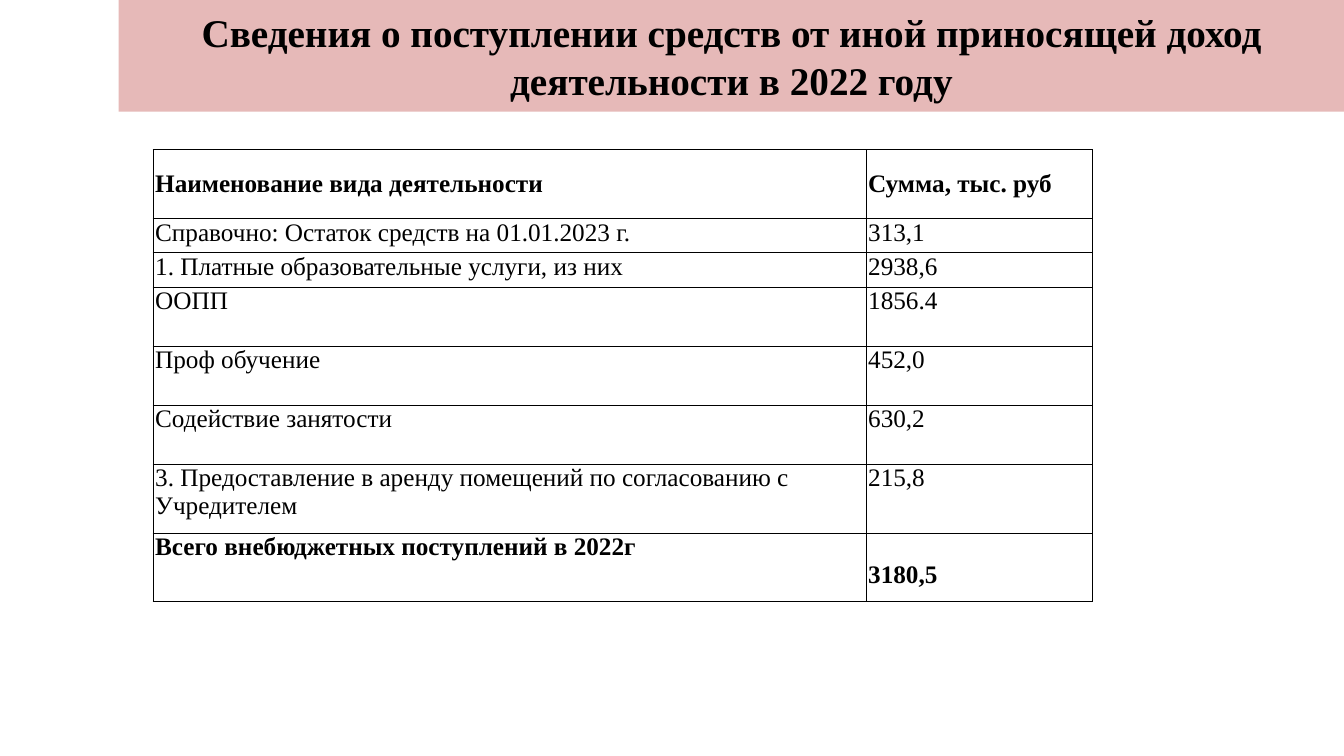
from dataclasses import dataclass

from lxml import etree
from pptx import Presentation
from pptx import util as u
from pptx.dml.color import RGBColor
from pptx.enum import shapes, text
from pptx.oxml.ns import qn


@dataclass(frozen=True)
class Theme:
    font: str = "Times New Roman"
    ink: str = "000000"
    band: str = "E6B9B8"
    title_size: int = 28
    body_size: int = 18
    border: int = 1


class Deck:
    """Style and current slide; the grid is 100 columns by 22 rows."""

    def __init__(self, theme):
        self.theme = theme
        self.prs = Presentation()
        self.prs.slide_width, self.prs.slide_height = u.Inches(13.33), u.Inches(7.5)
        self.s = self.prs.slides.add_slide(self.prs.slide_layouts[6])

    def x(self, cols):
        return int(self.prs.slide_width * cols / 100)

    def y(self, rows):
        return int(self.prs.slide_height * rows / 22)

    def set_text(self, tf, words, size, bold):
        p = tf.paragraphs[0]
        p.text = words
        p.font.name, p.font.size, p.font.bold = self.theme.font, u.Pt(size), bold
        p.font.color.rgb = RGBColor.from_string(self.theme.ink)
        return p

    def banner(self, words, left, top, width, height):
        sp = self.s.shapes.add_shape(shapes.MSO_SHAPE.RECTANGLE, self.x(left),
                                     self.y(top), self.x(width), self.y(height))
        sp.shadow.inherit = False
        sp.fill.solid()
        sp.fill.fore_color.rgb = RGBColor.from_string(self.theme.band)
        sp.line.fill.background()
        tf = sp.text_frame
        tf.word_wrap = True
        tf.vertical_anchor = text.MSO_ANCHOR.MIDDLE
        p = self.set_text(tf, words, self.theme.title_size, True)
        p.alignment = text.PP_ALIGN.CENTER

    def borders(self, cell):
        tc_pr = cell._tc.get_or_add_tcPr()
        for side in ("a:lnL", "a:lnR", "a:lnT", "a:lnB"):
            ln = etree.SubElement(tc_pr, qn(side), w=str(int(u.Pt(self.theme.border))))
            fill = etree.SubElement(ln, qn("a:solidFill"))
            etree.SubElement(fill, qn("a:srgbClr"), val=self.theme.ink)

    def table(self, rows, left, top, widths, heights):
        frame = self.s.shapes.add_table(len(rows), len(widths), self.x(left), self.y(top),
                                        self.x(sum(widths)), self.y(sum(heights)))
        table = frame.table
        table.first_row = table.horz_banding = False
        for column, width in zip(table.columns, widths):
            column.width = self.x(width)
        for i, (row, height) in enumerate(zip(rows, heights)):
            table.rows[i].height = self.y(height)
            for j, words in enumerate(row):
                cell = table.cell(i, j)
                self.borders(cell)
                cell.fill.background()
                cell.margin_left = cell.margin_right = u.Inches(0.02)
                cell.margin_top = cell.margin_bottom = 0
                if i == 0:
                    cell.vertical_anchor = text.MSO_ANCHOR.MIDDLE
                self.set_text(cell.text_frame, words, self.theme.body_size,
                              i in (0, len(rows) - 1))
        return table


def main():
    deck = Deck(Theme())

    # Title band
    deck.banner("Сведения о поступлении средств от иной приносящей доход "
                "деятельности в 2022 году", 8.83, 0, 91.17, 3.25)

    # Income table
    income = [
        ("Наименование вида деятельности", "Сумма, тыс. руб"),
        ("Справочно: Остаток средств на 01.01.2023 г.", "313,1"),
        ("1. Платные образовательные услуги, из них", "2938,6"),
        ("ООПП", "1856.4"),
        ("Проф обучение", "452,0"),
        ("Содействие занятости", "630,2"),
        ("3. Предоставление в аренду помещений по согласованию с Учредителем", "215,8"),
        ("Всего внебюджетных поступлений в 2022г", "3180,5"),
    ]
    table = deck.table(income, 11.4, 4.36, (53.05, 16.82),
                       (2, 1, 1, 1.72, 1.72, 1.72, 2, 2))
    # The total sits one line lower than its label
    table.cell(len(income) - 1, 1).margin_top = u.Inches(0.28)

    deck.prs.save("out.pptx")


if __name__ == "__main__":
    main()
